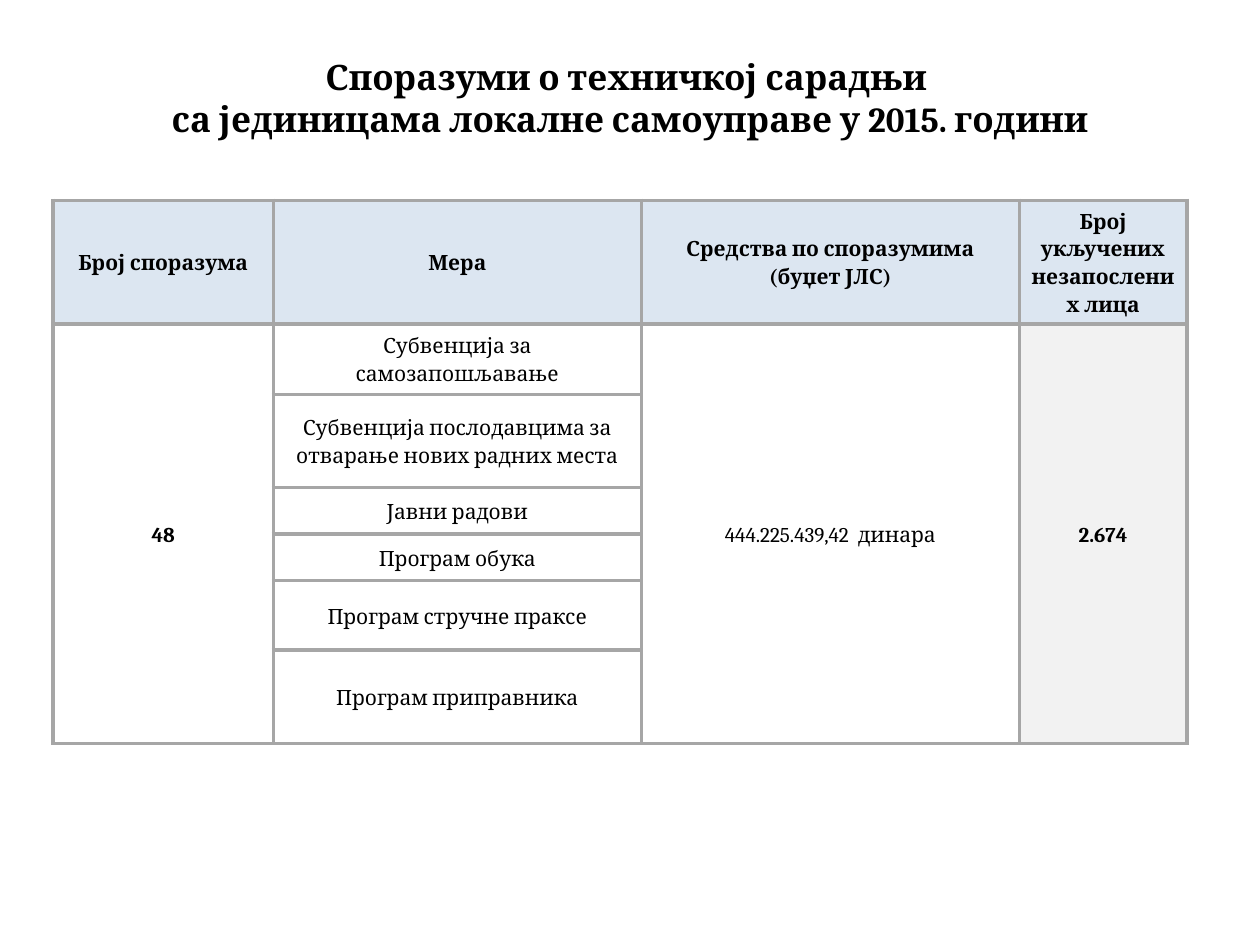
from pptx import Presentation
from pptx.dml.color import RGBColor
from pptx.enum.text import MSO_ANCHOR, PP_ALIGN
from pptx.oxml import parse_xml
from pptx.oxml.ns import nsdecls
from pptx.util import Inches, Pt

COLORS = {"text": "000000", "border": "A6A6A6", "header": "DCE6F1",
          "white": "FFFFFF", "total": "F2F2F2"}


def write(tf, text, size=12, bold=False, spacing=1.0):
    """Fill a text frame with centred text, one paragraph per line."""
    tf.word_wrap = True
    for i, line in enumerate(text.split("\n")):
        p = tf.paragraphs[0] if i == 0 else tf.add_paragraph()
        p.text = line
        p.alignment = PP_ALIGN.CENTER
        p.line_spacing = spacing
        for r in p.runs:
            r.font.name = "Cambria"
            r.font.size = Pt(size)
            r.font.bold = bold
            r.font.color.rgb = RGBColor.from_string(COLORS["text"])


def set_borders(cell):
    """Draw the same line on all four sides of a cell."""
    tcPr = cell._tc.get_or_add_tcPr()
    for i, side in enumerate(("lnL", "lnR", "lnT", "lnB")):
        tcPr.insert(i, parse_xml(
            f'<a:{side} {nsdecls("a")} w="{Pt(2.25)}"><a:solidFill>'
            f'<a:srgbClr val="{COLORS["border"]}"/></a:solidFill></a:{side}>'))


prs = Presentation()
prs.slide_width, prs.slide_height = Inches(10), Inches(7.5)
s = prs.slides.add_slide(prs.slide_layouts[6])

# Title
sp = s.shapes.add_textbox(Inches(0.5), Inches(0.3), Inches(9), Inches(0.95))
tf = sp.text_frame
tf.vertical_anchor = MSO_ANCHOR.MIDDLE
write(tf, "Споразуми о техничкој сарадњи \v"
          "са јединицама локалне самоуправе у 2015. години", size=20, bold=True)

# Table grid
widths = [1.75, 2.92, 3, 1.33]
heights = [0.98, 0.56, 0.74, 0.37, 0.37, 0.55, 0.74]
table = s.shapes.add_table(len(heights), len(widths), Inches(0.42), Inches(1.59),
                           Inches(sum(widths)), Inches(sum(heights))).table
for column, width in zip(table.columns, widths):
    column.width = Inches(width)
for row, height in zip(table.rows, heights):
    row.height = Inches(height)

# Cell style: header row, shaded last column, white elsewhere
for y in range(len(heights)):
    for x in range(len(widths)):
        cell = table.cell(y, x)
        cell.margin_left = cell.margin_right = Inches(0.07)
        cell.margin_top = cell.margin_bottom = 0
        cell.vertical_anchor = MSO_ANCHOR.MIDDLE
        fill = "header" if y == 0 else "total" if x == 3 else "white"
        cell.fill.solid()
        cell.fill.fore_color.rgb = RGBColor.from_string(COLORS[fill])
        set_borders(cell)

# Header row
headers = ["Број споразума", "Мера", "Средства по споразумима\n(буџет ЈЛС)",
           "Број укључених незапослених лица"]
for x, text in enumerate(headers):
    write(table.cell(0, x).text_frame, text, bold=True, spacing=1.15)

# Measures
measures = ["Субвенција за самозапошљавање",
            "Субвенција послодавцима за отварање нових радних места",
            "Јавни радови", "Програм обука", "Програм стручне праксе",
            "Програм приправника"]
for y, text in enumerate(measures, start=1):
    write(table.cell(y, 1).text_frame, text, spacing=1.15)

# Totals that span all measures
totals = [(0, "48", True), (2, "444.225.439,42  динара", False), (3, "2.674", True)]
for x, text, bold in totals:
    cell = table.cell(1, x)
    cell.merge(table.cell(len(measures), x))
    write(cell.text_frame, text, bold=bold, spacing=1.15)

prs.save("out.pptx")
